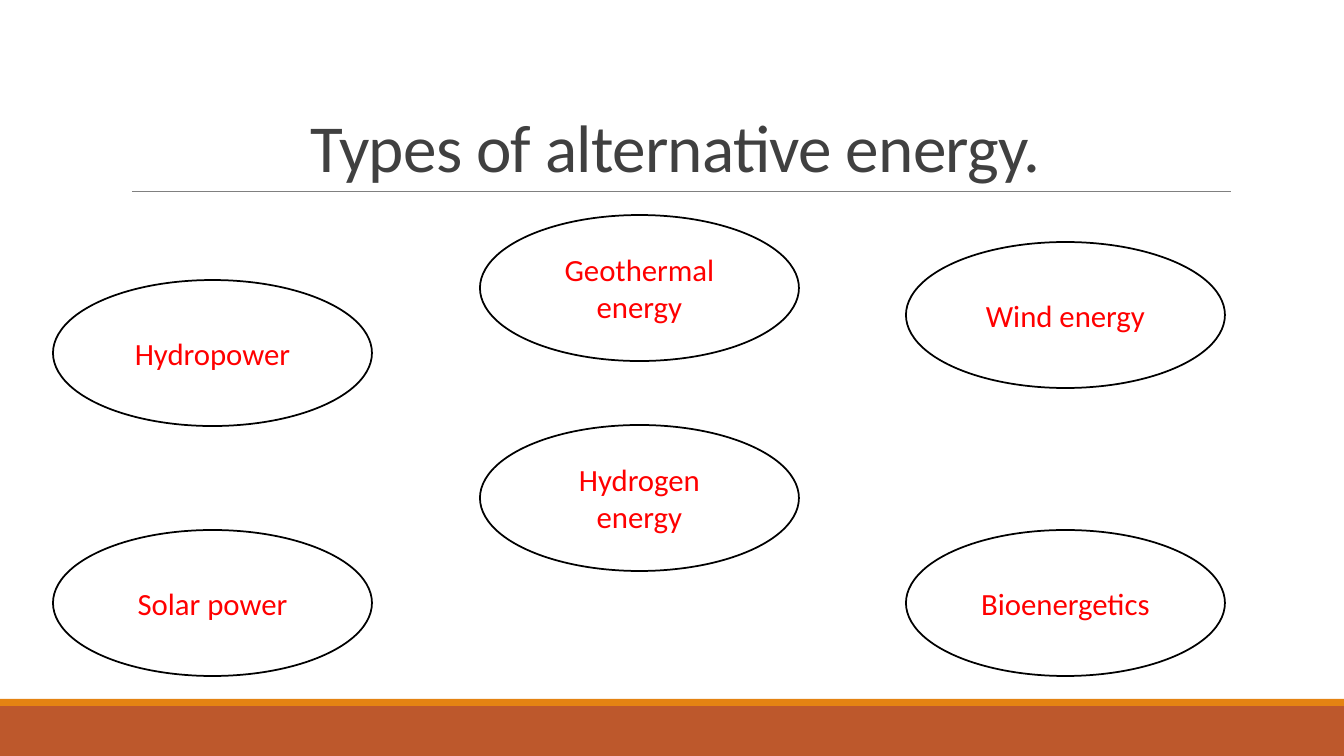
import pptx
import pptx.util
import pptx.dml.color
import pptx.enum.shapes
import pptx.enum.text
import pptx.oxml
import pptx.oxml.ns

SCALE = 914400 / 100.8
WIDE, HIGH = 1344, 756
FONT = "Calibri"
COLORS = {
    "rust": "BD582C",
    "orange": "E48312",
    "rule": "808080",
    "title": "404040",
    "white": "FFFFFF",
    "black": "000000",
    "red": "FF0000",
}
SHAPES = pptx.enum.shapes.MSO_SHAPE
ANCHOR = pptx.enum.text.MSO_ANCHOR

LEFT, MID, RIGHT = 53, 480, 906
OVAL = (319, 146)
TYPES = [
    ("Hydropower", LEFT, 280),
    ("Bioenergetics", RIGHT, 530),
    ("Solar power", LEFT, 530),
    ("Hydrogen energy", MID, 425),
    ("Geothermal energy", MID, 215),
    ("Wind energy", RIGHT, 242),
]


def px(count):
    return pptx.util.Emu(round(count * SCALE))


def color(name):
    return pptx.dml.color.RGBColor.from_string(COLORS[name])


def add_shape(slide, kind, box, fill, line=None):
    shape = slide.shapes.add_shape(kind, *map(px, box))
    shape.shadow.inherit = False
    shape.fill.solid()
    shape.fill.fore_color.rgb = color(fill)
    if line:
        shape.line.color.rgb = color(line)
        shape.line.width = pptx.util.Pt(1.25)
    else:
        shape.line.fill.background()
    return shape


def add_text(shape, text, size, ink, anchor):
    """Put one centred run in the shape and return its paragraph and run."""
    frame = shape.text_frame
    frame.word_wrap = True
    frame.vertical_anchor = anchor
    para = frame.paragraphs[0]
    para.alignment = pptx.enum.text.PP_ALIGN.CENTER
    run = para.add_run()
    run.text = text
    run.font.name = FONT
    run.font.size = pptx.util.Pt(size)
    run.font.color.rgb = color(ink)
    return para, run


def add_footer(slide, box):
    left, top, width, height = box
    strip = 7
    add_shape(slide, SHAPES.RECTANGLE,
              (left, top + strip, width, height - strip), "rust")
    add_shape(slide, SHAPES.RECTANGLE, (left, top, width, strip), "orange")


def add_title(slide, box, text):
    """Place the heading with a thin rule along its bottom edge."""
    left, top, width, height = box
    base = top + height
    rule = slide.shapes.add_connector(
        pptx.enum.shapes.MSO_CONNECTOR.STRAIGHT,
        px(left + 11), px(base), px(left + width + 1), px(base))
    rule.line.color.rgb = color("rule")
    rule.line.width = pptx.util.Pt(0.5)
    props = rule._element.spPr
    props.append(pptx.oxml.parse_xml(
        "<a:effectLst %s/>" % pptx.oxml.ns.nsdecls("a")))

    label = slide.shapes.add_textbox(*map(px, box))
    para, run = add_text(label, text, 48, "title", ANCHOR.BOTTOM)
    para.line_spacing = 0.85
    run._r.get_or_add_rPr().set("spc", "-50")


def add_oval(slide, box, text):
    oval = add_shape(slide, SHAPES.OVAL, box, "white", "black")
    add_text(oval, text, 22, "red", ANCHOR.MIDDLE)


def main():
    deck = pptx.Presentation()
    deck.slide_width, deck.slide_height = px(WIDE), px(HIGH)
    slide = deck.slides.add_slide(deck.slide_layouts[6])
    add_footer(slide, (0, 699, WIDE, HIGH - 699))
    add_title(slide, (121, 31, 1109, 160), "Types of alternative energy.")
    for text, left, top in TYPES:
        add_oval(slide, (left, top, *OVAL), text)
    deck.save("out.pptx")


if __name__ == "__main__":
    main()
